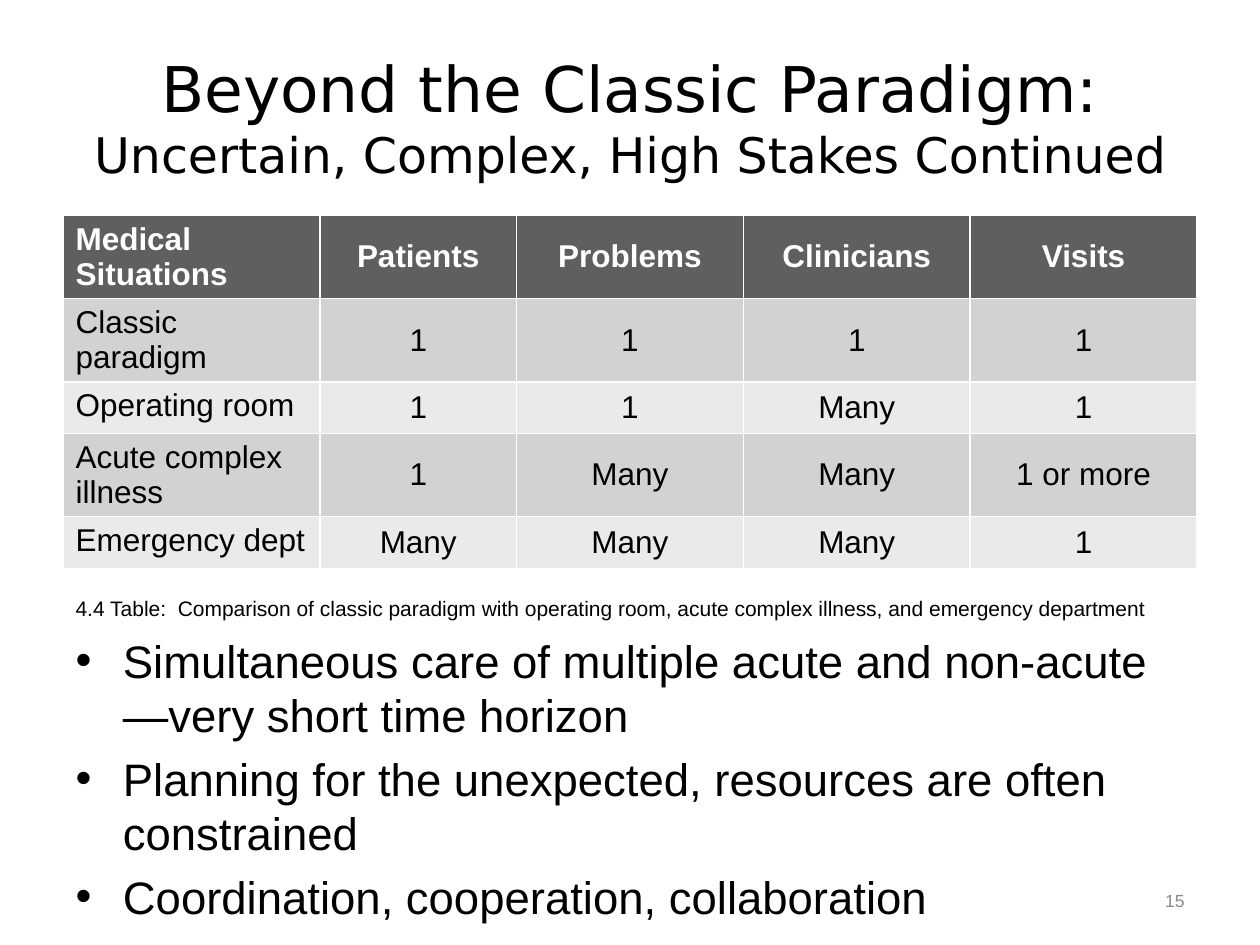
from dataclasses import dataclass

from lxml.etree import SubElement
from pptx import Presentation
from pptx.dml.color import RGBColor
from pptx.enum.text import MSO_ANCHOR as Anchor, MSO_AUTO_SIZE as AutoSize, PP_ALIGN as Align
from pptx.oxml.ns import qn
from pptx.util import Inches, Pt


@dataclass(frozen=True)
class Theme:
    title_font: str = "DejaVu Sans"
    body_font: str = "Arial"
    title_size: int = 36
    subtitle_size: int = 28
    bullet_size: int = 26
    table_size: int = 18
    caption_size: int = 12
    number_size: int = 10
    text: str = "000000"
    header_text: str = "FFFFFF"
    muted: str = "898989"
    header_fill: str = "5F5F5F"
    band_fills: tuple = ("D2D2D2", "EAEAEA")


THEME = Theme()
TWO_CONTENT_LAYOUT = 3

TITLE_LINES = ("Beyond the Classic Paradigm:", "Uncertain, Complex, High Stakes Continued")
COLUMN_WIDTHS = (2.04, 1.56, 1.8, 1.8, 1.8)
ROW_HEIGHT = 0.41
SITUATIONS = (
    ("Medical Situations", "Patients", "Problems", "Clinicians", "Visits"),
    ("Classic paradigm", "1", "1", "1", "1"),
    ("Operating room", "1", "1", "Many", "1"),
    ("Acute complex illness", "1", "Many", "Many", "1 or more"),
    ("Emergency dept", "Many", "Many", "Many", "1"),
)
CAPTION = ("4.4 Table:  Comparison of classic paradigm with operating room, "
           "acute complex illness, and emergency department")
BULLETS = (
    "Simultaneous care of multiple acute and non-acute—very short time horizon",
    "Planning for the unexpected, resources are often constrained",
    "Coordination, cooperation, collaboration",
)


def place(shape, box):
    shape.left, shape.top, shape.width, shape.height = map(Inches, box)


def format_run(run, size, color=THEME.text, font=THEME.body_font, bold=False):
    run.font.name = font
    run.font.size = Pt(size)
    run.font.bold = bold
    run.font.color.rgb = RGBColor.from_string(color)


def fill_text(shape, box, text, size, color=THEME.text):
    """Place a text shape and give all its text one format."""
    place(shape, box)
    frame = shape.text_frame
    frame.word_wrap = True
    frame.auto_size = AutoSize.NONE
    frame.text = text
    for paragraph in frame.paragraphs:
        for run in paragraph.runs:
            format_run(run, size, color)
    return frame


def add_title(slide, box):
    title = slide.shapes.title
    frame = fill_text(title, box, "\v".join(TITLE_LINES), THEME.title_size)
    paragraph = frame.paragraphs[0]
    paragraph.alignment = Align.CENTER
    for run, size in zip(paragraph.runs, (THEME.title_size, THEME.subtitle_size)):
        format_run(run, size, font=THEME.title_font)
    # The line break needs its own size, or the template's larger one applies.
    line_break = paragraph._p.find(qn("a:br"))
    SubElement(line_break, qn("a:rPr")).set("sz", str(THEME.title_size * 100))


def add_situation_table(slide, box):
    frame = slide.shapes.add_table(len(SITUATIONS), len(COLUMN_WIDTHS), *map(Inches, box))
    table = frame.table
    for column, width in zip(table.columns, COLUMN_WIDTHS):
        column.width = Inches(width)
    for row_index, (row, values) in enumerate(zip(table.rows, SITUATIONS)):
        row.height = Inches(ROW_HEIGHT)
        is_header = row_index == 0
        fill = THEME.header_fill if is_header else THEME.band_fills[(row_index - 1) % 2]
        color = THEME.header_text if is_header else THEME.text
        for column_index, (cell, value) in enumerate(zip(row.cells, values)):
            cell.fill.solid()
            cell.fill.fore_color.rgb = RGBColor.from_string(fill)
            cell.text_frame.text = value
            paragraph = cell.text_frame.paragraphs[0]
            format_run(paragraph.runs[0], THEME.table_size, color, bold=is_header)
            if column_index > 0:
                cell.vertical_anchor = Anchor.MIDDLE
                paragraph.alignment = Align.CENTER
    place(frame, box)


def add_caption(slide, box):
    frame = fill_text(slide.placeholders[1], box, CAPTION, THEME.caption_size)
    properties = frame.paragraphs[0]._p.get_or_add_pPr()
    properties.set("marL", "0")
    properties.set("indent", "0")
    SubElement(properties, qn("a:buNone"))


def add_bullets(slide, box):
    fill_text(slide.placeholders[2], box, "\n".join(BULLETS), THEME.bullet_size)


def add_slide_number(slide, box):
    text_box = slide.shapes.add_textbox(*map(Inches, box))
    frame = fill_text(text_box, box, "15", THEME.number_size, THEME.muted)
    frame.vertical_anchor = Anchor.MIDDLE
    frame.paragraphs[0].alignment = Align.RIGHT


def main():
    presentation = Presentation()
    presentation.slide_width, presentation.slide_height = Inches(10), Inches(7.5)
    slide = presentation.slides.add_slide(presentation.slide_layouts[TWO_CONTENT_LAYOUT])
    left, width = 0.5, 9
    add_title(slide, (left, 0.3, width, 1.25))
    add_situation_table(slide, (left, 1.71, width, 2.91))
    add_caption(slide, (left, 4.68, width, 0.58))
    add_bullets(slide, (left, 4.97, width, 2.41))
    add_slide_number(slide, (8.94, 6.85, 0.56, 0.6))
    presentation.save("out.pptx")


if __name__ == "__main__":
    main()
